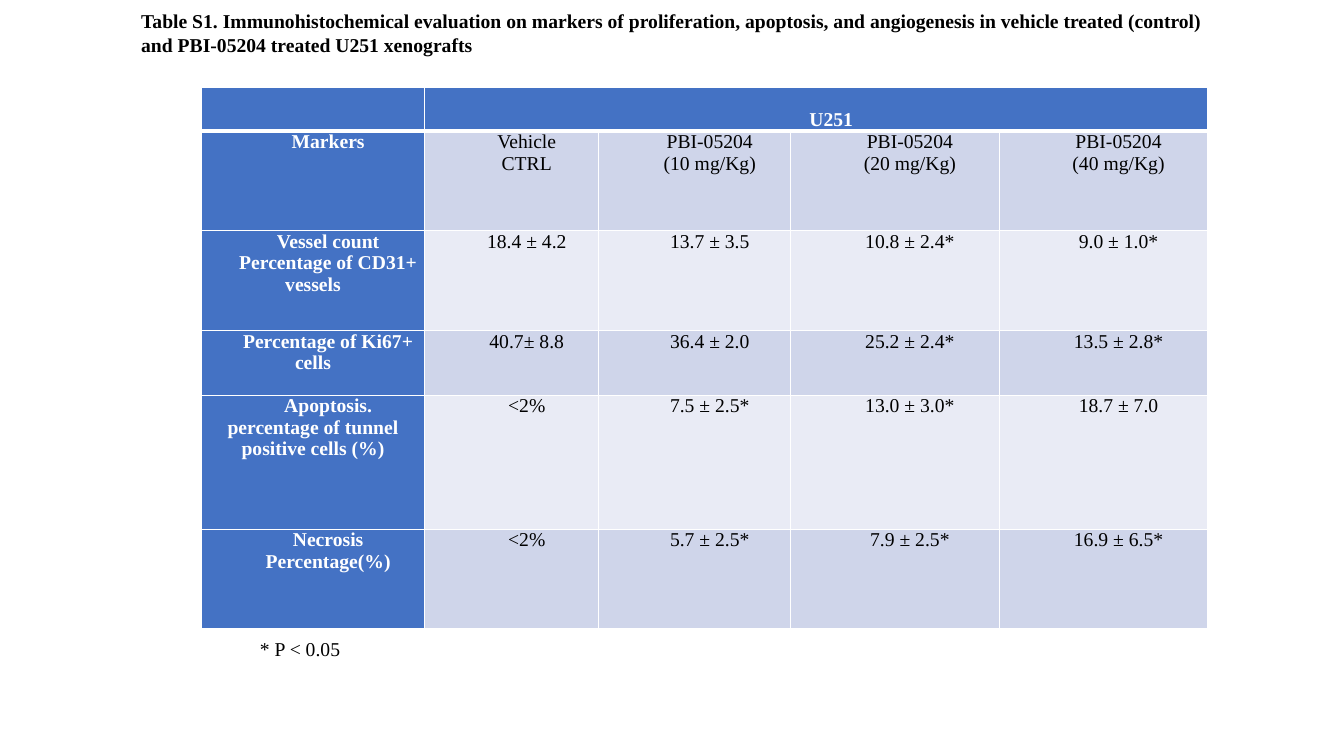
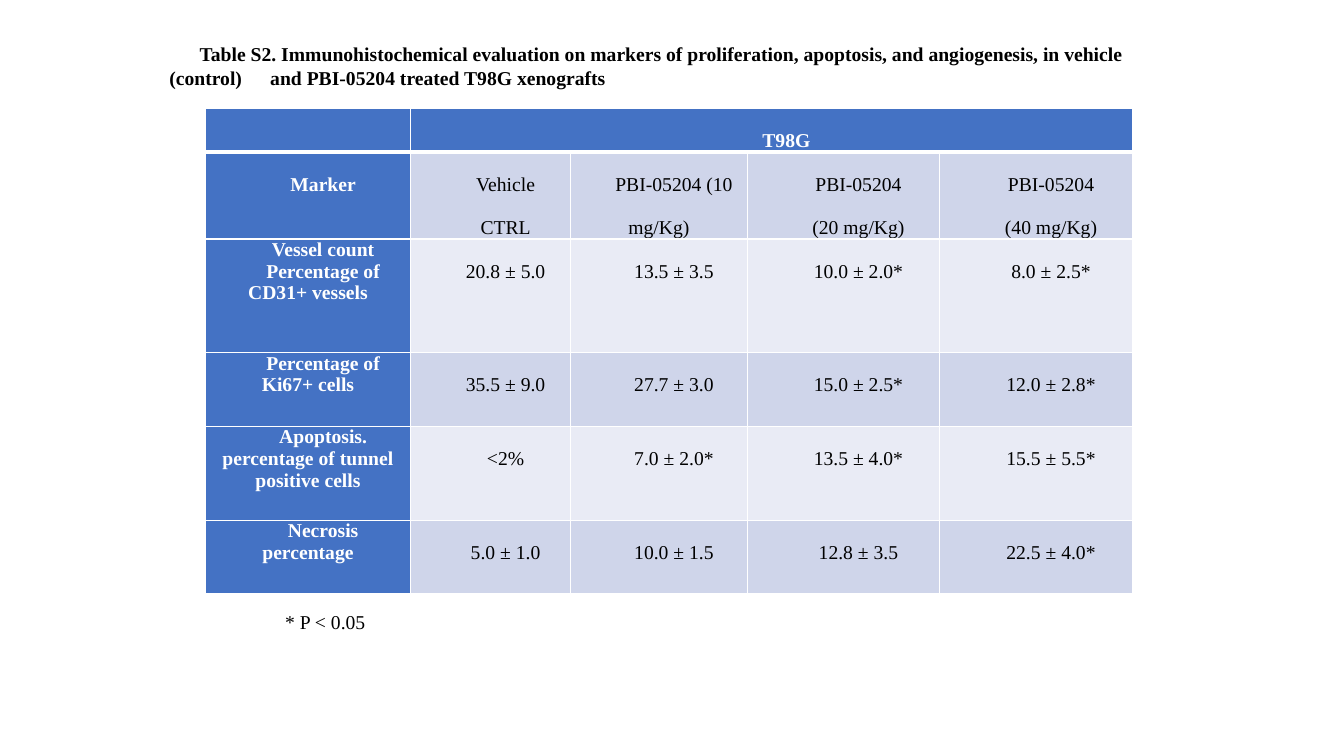
from dataclasses import dataclass
from typing import Any

from lxml import etree
from pptx import Presentation
from pptx.dml.color import RGBColor
from pptx.enum.text import MSO_ANCHOR, MSO_AUTO_SIZE, PP_ALIGN
from pptx.oxml.ns import qn
from pptx.util import Inches, Pt

LEFT = PP_ALIGN.LEFT
CENTER = PP_ALIGN.CENTER
TOP = MSO_ANCHOR.TOP
NO_AUTOSIZE = MSO_AUTO_SIZE.NONE

COLORS = {
    "header": "4472C4",
    "band_dark": "CFD5EA",
    "band_light": "E9EBF5",
    "border": "FFFFFF",
    "light_text": "FFFFFF",
    "dark_text": "000000",
}
FONT_FORMAT = {"name": "Times New Roman", "size": Pt(14)}
CELL_FORMAT = {
    "margin_left": Inches(0.07),
    "margin_right": Inches(0.07),
    "margin_top": 0,
    "margin_bottom": 0,
    "vertical_anchor": TOP,
}
FRAME_FORMAT = {
    "word_wrap": True,
    "auto_size": NO_AUTOSIZE,
    "vertical_anchor": TOP,
}
FIRST_LINE_INDENT = 0.3
TITLE_ONLY = 5
THIN, THICK = 1, 3
FOOTNOTE = "* P < 0.05"


@dataclass(frozen=True)
class Area:
    left: float
    top: float
    width: float
    height: float

    def lengths(self) -> list[int]:
        return [Inches(value) for value in (self.left, self.top, self.width, self.height)]


@dataclass(frozen=True)
class TextStyle:
    color: str
    bold: bool = False
    align: Any = LEFT
    spacing: float = 1.0
    indent: float = 0
    tab: float = 0


@dataclass(frozen=True)
class MarkerPage:
    title: str
    title_area: Area
    title_style: TextStyle
    table_area: Area
    column_widths: list[float]
    row_heights: list[float]
    cell_line: str
    body_spacing: float
    rows: list[list[str]]
    footnote_area: Area


PAGES = [
    MarkerPage(
        title="Table S1. Immunohistochemical evaluation on markers of proliferation, "
        "apoptosis, and angiogenesis in vehicle treated (control)\n"
        "and PBI-05204 treated U251 xenografts",
        title_area=Area(1.3, 0.04, 12, 0.88),
        title_style=TextStyle("dark_text", bold=True),
        table_area=Area(2, 0.87, 9.98, 5.33),
        column_widths=[2.21, 1.73, 1.9, 2.07, 2.07],
        row_heights=[0.35, 0.99, 0.99, 0.64, 1.33, 0.99],
        cell_line="U251",
        body_spacing=1.0,
        rows=[
            ["Markers", "Vehicle\nCTRL", "PBI-05204\n(10 mg/Kg)",
             "PBI-05204\n(20 mg/Kg)", "PBI-05204\n(40 mg/Kg)"],
            ["Vessel count\nPercentage of CD31+ vessels",
             "18.4 ± 4.2", "13.7 ± 3.5", "10.8 ± 2.4*", "9.0 ± 1.0*"],
            ["Percentage of Ki67+ cells",
             "40.7± 8.8", "36.4 ± 2.0", "25.2 ± 2.4*", "13.5 ± 2.8*"],
            ["Apoptosis. percentage of tunnel positive cells (%)",
             "<2%", "7.5 ± 2.5*", "13.0 ± 3.0*", "18.7 ± 7.0"],
            ["Necrosis\nPercentage(%)",
             "<2%", "5.7 ± 2.5*", "7.9 ± 2.5*", "16.9 ± 6.5*"],
        ],
        footnote_area=Area(2.48, 6.27, 5.28, 0.34),
    ),
    MarkerPage(
        title="Table S2. Immunohistochemical evaluation on markers of proliferation, "
        "apoptosis, and angiogenesis, in vehicle (control)\t"
        "and PBI-05204 treated T98G xenografts",
        title_area=Area(1.58, 0.37, 10.3, 0.57),
        title_style=TextStyle("dark_text", bold=True, indent=FIRST_LINE_INDENT, tab=0.92),
        table_area=Area(2.04, 1.08, 9.21, 4.92),
        column_widths=[2.03, 1.59, 1.75, 1.91, 1.91],
        row_heights=[0.34, 0.73, 1.13, 0.73, 0.93, 0.73],
        cell_line="T98G",
        body_spacing=2.0,
        rows=[
            ["Marker", "Vehicle\nCTRL", "PBI-05204 (10 mg/Kg)",
             "PBI-05204\n(20 mg/Kg)", "PBI-05204\n(40 mg/Kg)"],
            ["Vessel count\nPercentage of CD31+ vessels",
             "20.8 ± 5.0", "13.5 ± 3.5", "10.0 ± 2.0*", "8.0 ± 2.5*"],
            ["Percentage of Ki67+ cells",
             "35.5 ± 9.0", "27.7 ± 3.0", "15.0 ± 2.5*", "12.0 ± 2.8*"],
            ["Apoptosis. percentage of tunnel positive cells",
             "<2%", "7.0 ± 2.0*", "13.5 ± 4.0*", "15.5 ± 5.5*"],
            ["Necrosis percentage",
             "5.0 ± 1.0", "10.0 ± 1.5", "12.8 ± 3.5", "22.5 ± 4.0*"],
        ],
        footnote_area=Area(2.73, 6, 5.28, 0.34),
    ),
]


def apply_format(target: Any, values: dict[str, Any]) -> None:
    for name, value in values.items():
        setattr(target, name, value)


def write_text(frame: Any, text: str, style: TextStyle) -> None:
    for index, line in enumerate(text.split("\n")):
        paragraph = frame.add_paragraph() if index else frame.paragraphs[0]
        properties = paragraph._p.get_or_add_pPr()
        properties.set("marL", "0")
        properties.set("indent", str(Inches(style.indent)))
        if style.tab:
            tabs = etree.SubElement(properties, qn("a:tabLst"))
            etree.SubElement(tabs, qn("a:tab"), pos=str(Inches(style.tab)), algn="l")
        paragraph.alignment = style.align
        paragraph.line_spacing = style.spacing
        if line:
            span = paragraph.add_run()
            span.text = line
            font = span.font
        else:
            font = paragraph.font
        apply_format(font, FONT_FORMAT | {"bold": style.bold})
        font.color.rgb = RGBColor.from_string(COLORS[style.color])


def set_borders(cell: Any, row: int) -> None:
    widths = {
        "a:lnL": THIN,
        "a:lnR": THIN,
        "a:lnT": THICK if row == 1 else THIN,
        "a:lnB": THICK if row == 0 else THIN,
    }
    properties = cell._tc.get_or_add_tcPr()
    for position, (tag, width) in enumerate(widths.items()):
        line = etree.Element(qn(tag), w=str(Pt(width)))
        fill = etree.SubElement(line, qn("a:solidFill"))
        etree.SubElement(fill, qn("a:srgbClr"), val=COLORS["border"])
        properties.insert(position, line)


def cell_look(page: MarkerPage, row: int, column: int) -> tuple[str, TextStyle]:
    is_heading = row == 0 or column == 0
    if is_heading:
        fill = "header"
    else:
        fill = "band_dark" if row % 2 else "band_light"
    if row == 0:
        spacing = 2.0 if column else 1.0
    else:
        spacing = 1.0 if column == 0 and row > 1 else page.body_spacing
    color = "light_text" if is_heading else "dark_text"
    return fill, TextStyle(color, is_heading, CENTER, spacing, FIRST_LINE_INDENT)


def add_title(slide: Any, page: MarkerPage) -> None:
    title = slide.shapes.title
    title.left, title.top, title.width, title.height = page.title_area.lengths()
    apply_format(title.text_frame, FRAME_FORMAT)
    write_text(title.text_frame, page.title, page.title_style)


def add_marker_table(slide: Any, page: MarkerPage) -> None:
    contents = [["", page.cell_line, "", "", ""], *page.rows]
    frame = slide.shapes.add_table(
        len(contents), len(page.column_widths), *page.table_area.lengths()
    )
    table = frame.table
    apply_format(table, {"first_row": True, "first_col": True, "horz_banding": False})
    for column, width in zip(table.columns, page.column_widths):
        column.width = Inches(width)
    for row, height in zip(table.rows, page.row_heights):
        row.height = Inches(height)
    table.cell(0, 1).merge(table.cell(0, len(page.column_widths) - 1))
    for row, texts in enumerate(contents):
        for column, text in enumerate(texts):
            cell = table.cell(row, column)
            fill, style = cell_look(page, row, column)
            apply_format(cell, CELL_FORMAT)
            cell.fill.solid()
            cell.fill.fore_color.rgb = RGBColor.from_string(COLORS[fill])
            set_borders(cell, row)
            if not cell.is_spanned:
                write_text(cell.text_frame, text, style)


def add_footnote(slide: Any, page: MarkerPage) -> None:
    box = slide.shapes.add_textbox(*page.footnote_area.lengths())
    apply_format(box.text_frame, FRAME_FORMAT)
    write_text(box.text_frame, FOOTNOTE, TextStyle("dark_text"))


def main() -> None:
    deck = Presentation()
    deck.slide_width = Inches(13.33)
    deck.slide_height = Inches(7.5)
    for page in PAGES:
        slide = deck.slides.add_slide(deck.slide_layouts[TITLE_ONLY])
        add_title(slide, page)
        add_marker_table(slide, page)
        add_footnote(slide, page)
    deck.save("out.pptx")


if __name__ == "__main__":
    main()
